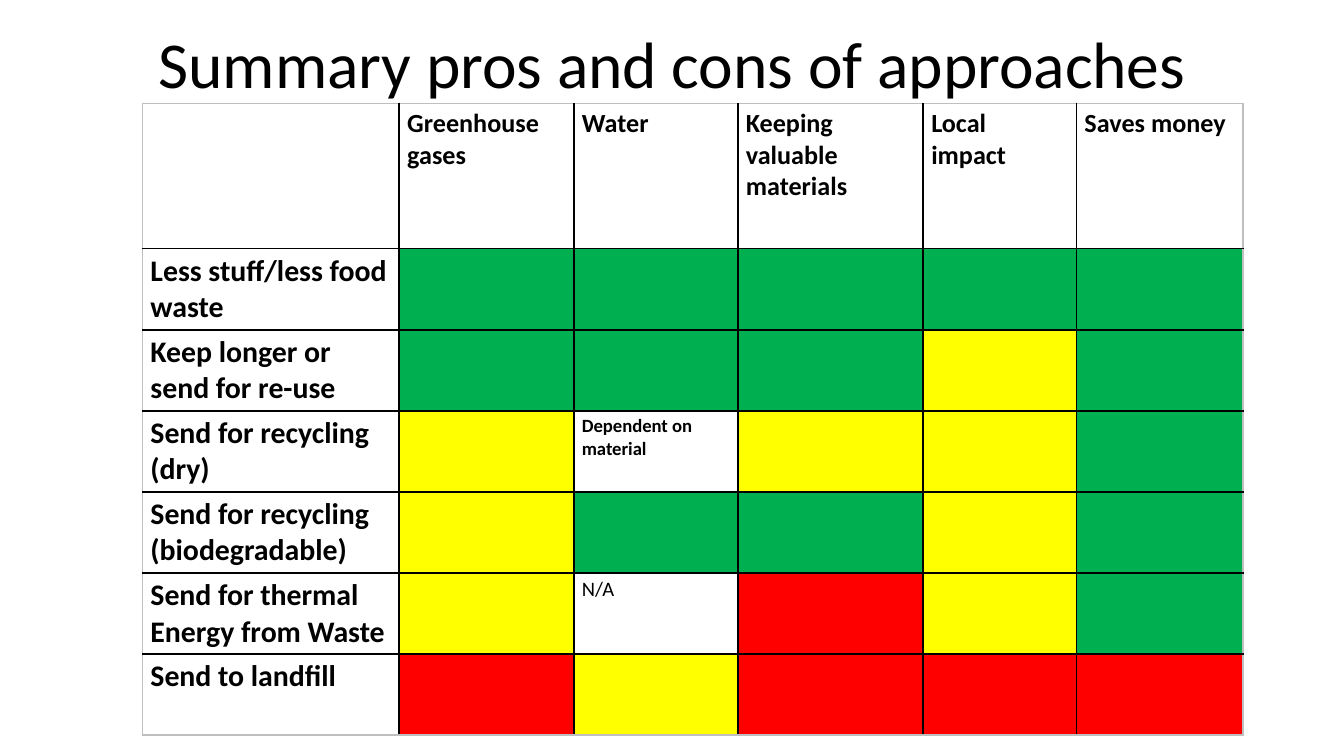
from dataclasses import dataclass

from lxml.etree import SubElement
from pptx import Presentation
from pptx.dml.color import RGBColor
from pptx.enum.text import MSO_ANCHOR, MSO_AUTO_SIZE, PP_ALIGN
from pptx.oxml.ns import qn
from pptx.util import Inches, Pt


@dataclass(frozen=True)
class Theme:
    """Hold the colours, font and type sizes of the slide."""
    font: str = "Calibri"
    ink: str = "000000"
    outer_line: str = "BFBFBF"
    good: str = "00B050"
    mixed: str = "FFFF00"
    bad: str = "FF0000"
    title: float = 35.1
    criterion: int = 14
    approach: int = 16
    remark: int = 10
    not_applicable: int = 11


THEME = Theme()
RATINGS = {"G": THEME.good, "Y": THEME.mixed, "R": THEME.bad}
CRITERIA = ["Greenhouse gases", "Water", "Keeping valuable materials",
            "Local\nimpact", "Saves money"]
APPROACHES = [
    ("Less stuff/less food waste", "GGGGG"),
    ("Keep longer or send for re-use", "GGGYG"),
    ("Send for recycling (dry)", "Y-YYG"),
    ("Send for recycling (biodegradable)", "YGGYG"),
    ("Send for thermal Energy from Waste", "Y-RYG"),
    ("Send to landfill", "RYRRR"),
]
REMARKS = {
    (3, 2): ("Dependent on\nmaterial", THEME.remark, True),
    (5, 2): ("N/A", THEME.not_applicable, False),
}
COLUMN_WIDTHS = [1.91, 1.3, 1.22, 1.38, 1.14, 1.24]
ROW_HEIGHTS = [1.08] + [0.6] * len(APPROACHES)
SLIDE_WIDTH = Inches(10)
SLIDE_HEIGHT = SLIDE_WIDTH * 9 // 16


def apply(target, values):
    """Set every named attribute on the target."""
    for name, value in values.items():
        setattr(target, name, value)


def write(frame, text, size, bold=False, align=PP_ALIGN.LEFT):
    """Write text in a frame, one paragraph a line."""
    frame.text = text
    for paragraph in frame.paragraphs:
        paragraph.alignment = align
        apply(paragraph.font, {"name": THEME.font, "size": Pt(size), "bold": bold})
        paragraph.font.color.rgb = RGBColor.from_string(THEME.ink)


def add_title(slide, text):
    """Place and format the slide title."""
    title = slide.shapes.title
    apply(title, {"left": Inches(0.5), "top": Inches(-0.01),
                  "width": Inches(9), "height": Inches(0.94)})
    apply(title.text_frame, {"word_wrap": True, "auto_size": MSO_AUTO_SIZE.NONE,
                             "vertical_anchor": MSO_ANCHOR.MIDDLE})
    write(title.text_frame, text, THEME.title, align=PP_ALIGN.CENTER)


def draw_borders(cell, outer_sides):
    """Line the cell, with a paler line on the outer sides of the table."""
    properties = cell._tc.get_or_add_tcPr()
    for side in "LRTB":
        line = SubElement(properties, qn(f"a:ln{side}"), w=str(Pt(1)))
        colour = THEME.outer_line if side in outer_sides else THEME.ink
        SubElement(SubElement(line, qn("a:solidFill")), qn("a:srgbClr"), val=colour)


def format_cell(cell, outer_sides, rating):
    """Set the margins, borders and rating colour of a cell."""
    apply(cell, {"margin_left": Inches(0.06), "margin_right": Inches(0.06),
                 "margin_top": Inches(0.03), "margin_bottom": Inches(0.03),
                 "vertical_anchor": MSO_ANCHOR.TOP})
    draw_borders(cell, outer_sides)
    if rating in RATINGS:
        cell.fill.solid()
        cell.fill.fore_color.rgb = RGBColor.from_string(RATINGS[rating])
    else:
        cell.fill.background()


def add_ratings_table(slide):
    """Add the table that rates each approach by each criterion."""
    row_count, column_count = len(ROW_HEIGHTS), len(COLUMN_WIDTHS)
    table = slide.shapes.add_table(
        row_count, column_count, Inches(1.06), Inches(0.77),
        Inches(sum(COLUMN_WIDTHS)), Inches(sum(ROW_HEIGHTS))).table
    apply(table, {"first_row": False, "horz_banding": False})
    for column, width in zip(table.columns, COLUMN_WIDTHS):
        column.width = Inches(width)
    for row, height in zip(table.rows, ROW_HEIGHTS):
        row.height = Inches(height)

    ratings = ["-" * column_count] + ["-" + marks for _, marks in APPROACHES]
    for r, marks in enumerate(ratings):
        for c, rating in enumerate(marks):
            edges = {"L": c == 0, "R": c == column_count - 1,
                     "T": r == 0, "B": r == row_count - 1}
            outer_sides = [side for side, is_outer in edges.items() if is_outer]
            format_cell(table.cell(r, c), outer_sides, rating)

    for c, criterion in enumerate(CRITERIA, 1):
        write(table.cell(0, c).text_frame, criterion, THEME.criterion, True)
    for r, (approach, _) in enumerate(APPROACHES, 1):
        write(table.cell(r, 0).text_frame, approach, THEME.approach, True)
    for (r, c), remark in REMARKS.items():
        write(table.cell(r, c).text_frame, *remark)


def main():
    """Build and save the slide."""
    presentation = Presentation()
    apply(presentation, {"slide_width": SLIDE_WIDTH, "slide_height": SLIDE_HEIGHT})
    slide = presentation.slides.add_slide(presentation.slide_layouts[5])
    add_title(slide, "Summary pros and cons of approaches")
    add_ratings_table(slide)
    presentation.save("out.pptx")


if __name__ == "__main__":
    main()
